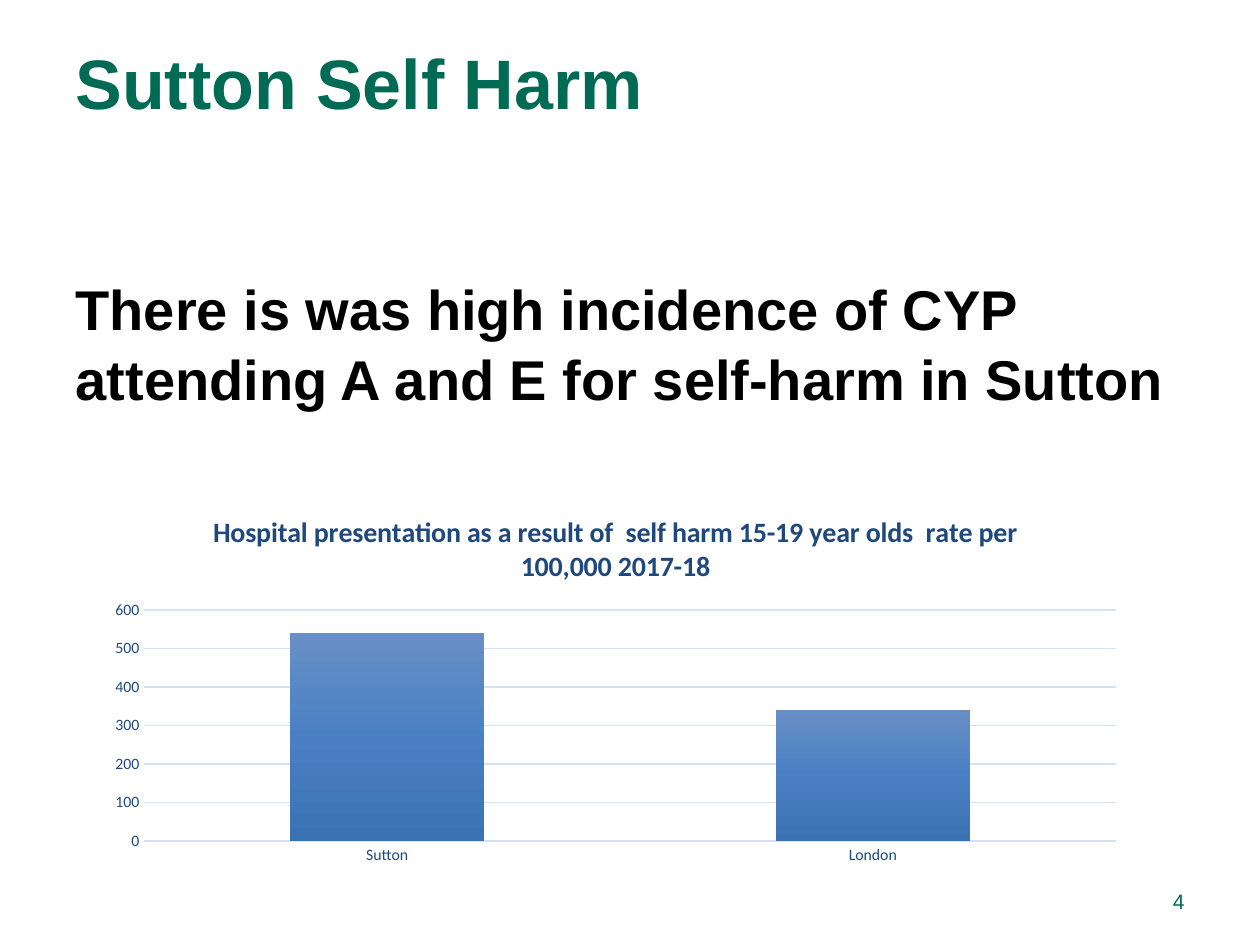
from copy import deepcopy

from lxml import etree
from pptx import Presentation
from pptx import util as u
from pptx.chart.data import CategoryChartData
from pptx.dml.color import RGBColor
from pptx.enum import chart as charts, text
from pptx.oxml.ns import qn

GREEN, NAVY, PALE = "006B54", "1F497D", "D4E3F4"
MARGIN = 0.5
WIDTH, HEIGHT = 10, 7.5
CONTENT_WIDTH = WIDTH - 2 * MARGIN


def style(font, name, size, color, bold=False):
    font.name, font.size, font.bold = name, u.Pt(size), bold
    font.color.rgb = RGBColor.from_string(color)


def place(box, left, top, width, height):
    box.left, box.top = u.Inches(left), u.Inches(top)
    box.width, box.height = u.Inches(width), u.Inches(height)


deck = Presentation()
deck.slide_width, deck.slide_height = u.Inches(WIDTH), u.Inches(HEIGHT)
page = deck.slides.add_slide(deck.slide_layouts[1])

# Title and statement
title, body = page.placeholders
place(title, MARGIN, 0.45, CONTENT_WIDTH, 1.25)
place(body, MARGIN, 2.1, CONTENT_WIDTH, 4.6)
title.text_frame.text = "Sutton Self Harm\v"
body.text_frame.text = (
    "There is was high incidence of CYP attending A and E for self-harm in Sutton"
)
for box, anchor, size, color in (
    (title, text.MSO_ANCHOR.BOTTOM, 40, GREEN),
    (body, text.MSO_ANCHOR.TOP, 32, "000000"),
):
    box.text_frame.auto_size = text.MSO_AUTO_SIZE.NONE
    box.text_frame.vertical_anchor = anchor
    para = box.text_frame.paragraphs[0]
    para.alignment = text.PP_ALIGN.LEFT
    para.space_before = u.Pt(0)
    style(para.font, "Arial", size, color, bold=True)

statement = body.text_frame.paragraphs[0]
statement.line_spacing = 1.05
properties = statement._p.get_or_add_pPr()
properties.set("marL", "0")
properties.set("indent", "0")
bullet = etree.Element(qn("a:buNone"))
properties.find(qn("a:defRPr")).addprevious(bullet)

# Column chart
data = CategoryChartData()
data.categories = ["Sutton", "London"]
data.add_series("Series 1", (540, 340))
chart = page.shapes.add_chart(
    charts.XL_CHART_TYPE.COLUMN_CLUSTERED,
    u.Inches(0.75), u.Inches(3.92), u.Inches(8.27), u.Inches(3), data,
).chart
style(chart.font, "Calibri", 10, "000000")
chart.has_legend = False
chart.has_title = True
chart.chart_title.include_in_layout = False
heading = chart.chart_title.text_frame
heading.text = (
    "Hospital presentation as a result of  self harm 15-19 year olds  "
    "rate per 100,000 2017-18"
)
style(heading.paragraphs[0].font, "Calibri", 16, NAVY, bold=True)

for axis in (chart.category_axis, chart.value_axis):
    axis.major_tick_mark = axis.minor_tick_mark = charts.XL_TICK_MARK.NONE
    style(axis.tick_labels.font, "Calibri", 9, NAVY)
chart.value_axis.minimum_scale = 0
chart.value_axis.maximum_scale = 600
chart.value_axis.major_unit = 100
chart.value_axis.format.line.fill.background()
for line in (
    chart.category_axis.format.line,
    chart.value_axis.major_gridlines.format.line,
):
    line.width = u.Pt(0.75)
    line.color.rgb = RGBColor.from_string(PALE)

plot = chart.plots[0]
plot.gap_width = 150
plot.vary_by_categories = False
series = plot.series[0]
fill = series.format.fill
fill.gradient()
fill.gradient_angle = 270
stop_list = next(series._element.iter(qn("a:gsLst")))
stop_list.insert(1, deepcopy(stop_list[0]))
shades = ((0, "688FC5"), (0.5, "4A80C3"), (1, "3B72B3"))
for stop, (position, color) in zip(fill.gradient_stops, shades):
    stop.position = position
    stop.color.rgb = RGBColor.from_string(color)

# Slide number
number = page.shapes.add_textbox(0, 0, 0, 0)
place(number, 7.17, 6.95, 2.33, 0.4)
number.text_frame.word_wrap = True
number.text_frame.vertical_anchor = text.MSO_ANCHOR.MIDDLE
para = number.text_frame.paragraphs[0]
para.alignment = text.PP_ALIGN.RIGHT
span = para.add_run()
span.text = "4"
style(span.font, "Arial", 12, GREEN)

deck.save("out.pptx")
